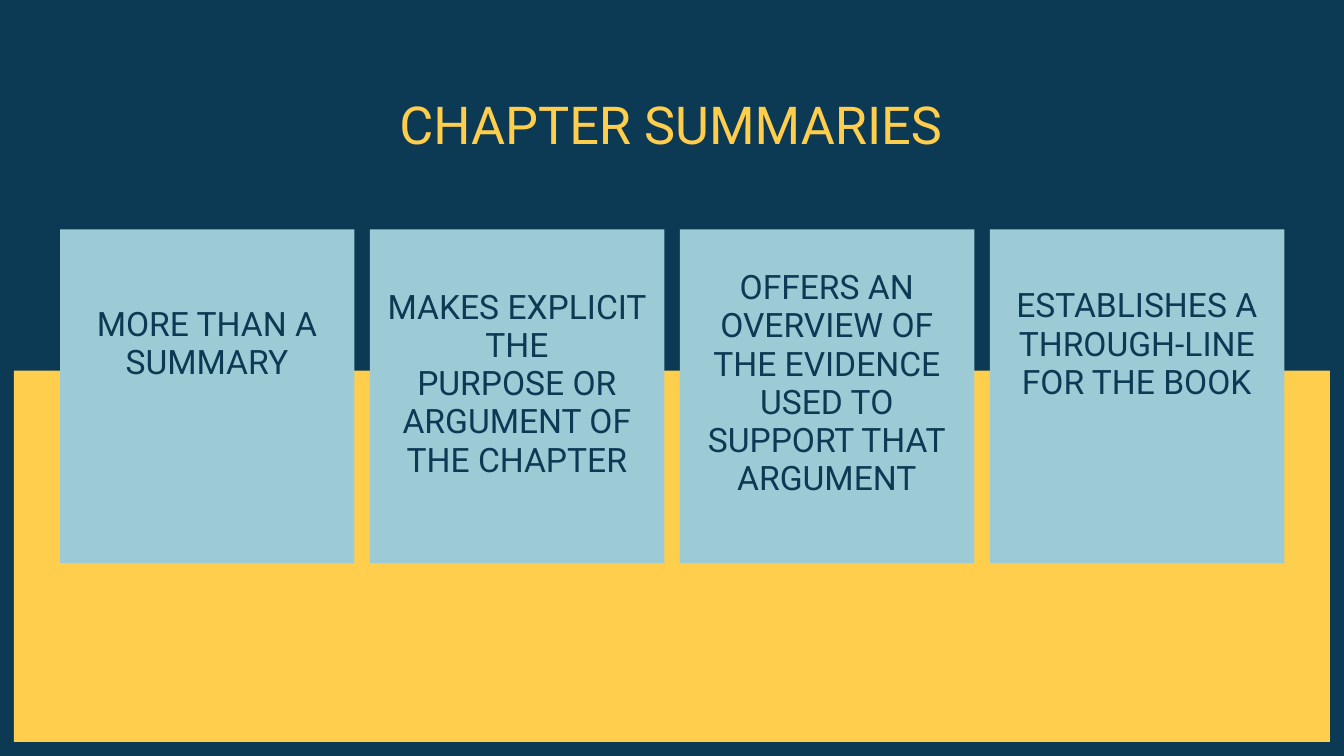
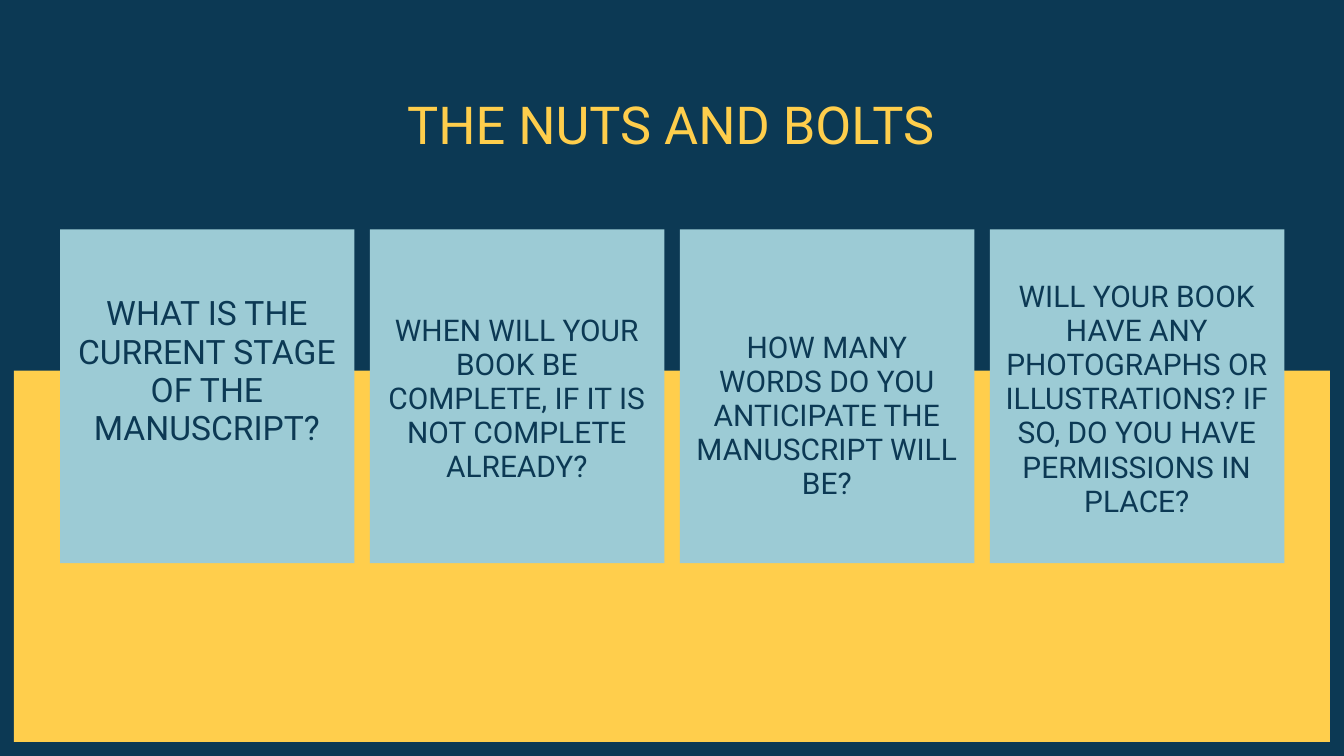
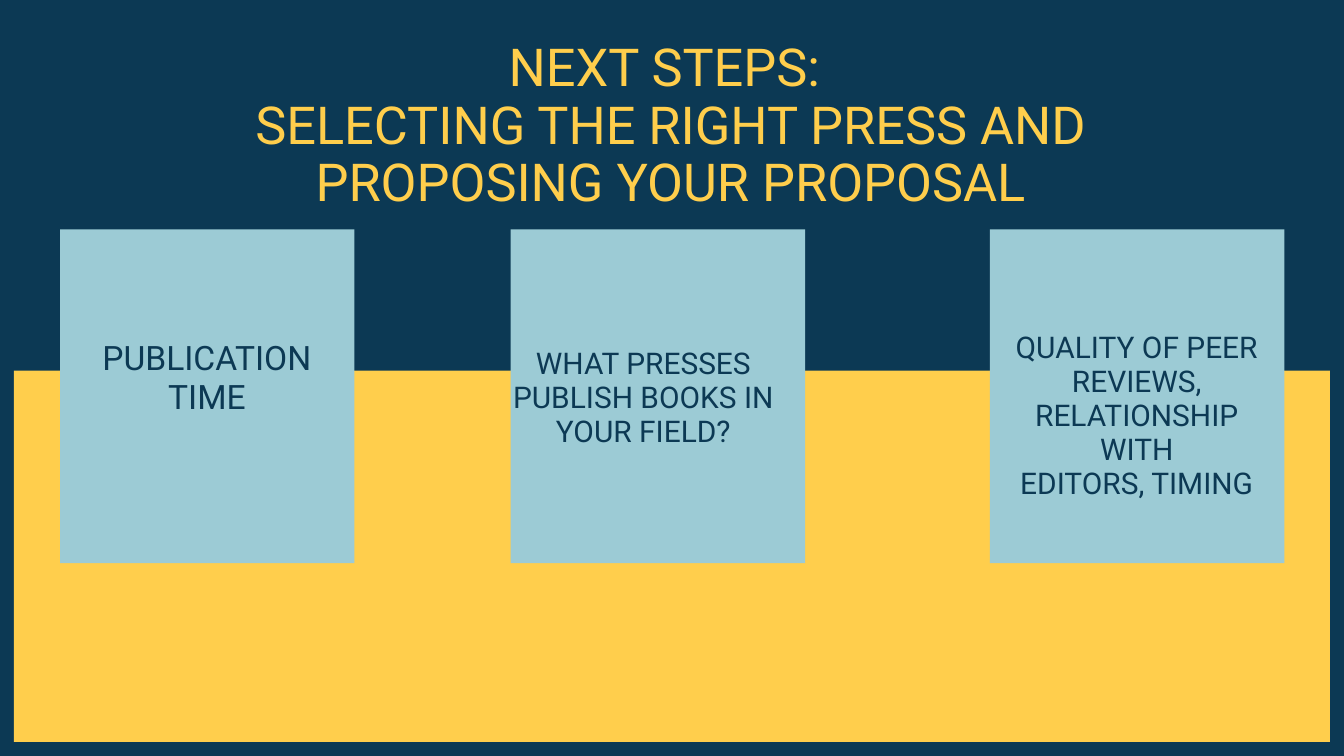
from dataclasses import dataclass

from pptx import Presentation
from pptx.dml.color import RGBColor
from pptx.enum.shapes import MSO_SHAPE
from pptx.enum.text import MSO_ANCHOR, MSO_AUTO_SIZE, PP_ALIGN
from pptx.util import Pt

# Shared look
NAVY = RGBColor(0x0C, 0x39, 0x54)
YELLOW = RGBColor(0xFF, 0xCE, 0x4C)
LIGHT_BLUE = RGBColor(0x9C, 0xCB, 0xD5)
FONT = "Roboto"
RECTANGLE = MSO_SHAPE.RECTANGLE
CENTER = PP_ALIGN.CENTER
TOP = MSO_ANCHOR.TOP
NO_AUTOFIT = MSO_AUTO_SIZE.NONE
TITLE_ONLY = 5

FRAME_FORMAT = {
    "margin_left": 0, "margin_top": 0, "margin_right": 0, "margin_bottom": 0,
    "word_wrap": True, "auto_size": NO_AUTOFIT, "vertical_anchor": TOP,
}

# Layout in points
PAGE_WIDTH, PAGE_HEIGHT = 1440, 810
BAND = (15, 397, 1410, 398)
TITLE_LEFT, TITLE_WIDTH, TITLE_MIDDLE = 79.2, 1279.4, 134.7
CARD_LEFT, CARD_TOP, CARD_PITCH = 64.3, 245.7, 332.1
CARD_WIDTH, CARD_HEIGHT = 315.4, 357.8
TEXT_INSET, TEXT_WIDTH = 15.2, 284.4


@dataclass(frozen=True)
class TextStyle:
    size: float
    leading: float
    color: RGBColor


TITLE = TextStyle(56, 61.6, YELLOW)
LARGE = TextStyle(36, 41, NAVY)
SMALL = TextStyle(32, 36.5, NAVY)


@dataclass(frozen=True)
class Card:
    column: float
    text_top: float
    line_count: int
    style: TextStyle
    paragraphs: tuple[str, ...]
    inset: float = TEXT_INSET


@dataclass(frozen=True)
class Page:
    title: tuple[str, ...]
    cards: tuple[Card, ...]


PAGES = (
    Page(("CHAPTER SUMMARIES",), (
        Card(0, 326.8, 2, LARGE, ("MORE THAN A SUMMARY",)),
        Card(1, 308.1, 5, LARGE, ("MAKES EXPLICIT THE",
                                  "PURPOSE OR ARGUMENT OF THE CHAPTER")),
        Card(2, 287.2, 6, LARGE, ("OFFERS AN OVERVIEW OF THE EVIDENCE USED TO SUPPORT THAT",
                                  "ARGUMENT")),
        Card(3, 306.7, 3, LARGE, ("ESTABLISHES A THROUGH-LINE FOR THE BOOK",)),
    )),
    Page(("THE NUTS AND BOLTS",), (
        Card(0, 315.4, 4, LARGE, ("WHAT IS THE CURRENT STAGE OF THE MANUSCRIPT?",)),
        Card(1, 335.5, 5, SMALL, ("WHEN WILL YOUR BOOK BE COMPLETE, IF IT IS NOT COMPLETE",
                                  "ALREADY?")),
        Card(2, 353.5, 5, SMALL, ("HOW MANY WORDS DO YOU ANTICIPATE THE MANUSCRIPT WILL BE?",)),
        Card(3, 299.5, 7, SMALL, ("WILL YOUR BOOK HAVE ANY PHOTOGRAPHS OR ILLUSTRATIONS? IF",
                                  "SO, DO YOU HAVE PERMISSIONS IN PLACE?")),
    )),
    Page(("NEXT STEPS: ", "SELECTING THE RIGHT PRESS AND", "PROPOSING YOUR PROPOSAL"), (
        Card(0, 363.6, 2, LARGE, ("PUBLICATION TIME",)),
        Card(1.454, 371.5, 3, SMALL, ("WHAT PRESSES PUBLISH BOOKS IN YOUR FIELD?",), inset=0),
        Card(3, 353.5, 5, SMALL, ("QUALITY OF PEER REVIEWS, RELATIONSHIP WITH",
                                  "EDITORS, TIMING")),
    )),
)


def apply_format(target, values: dict) -> None:
    for name, value in values.items():
        setattr(target, name, value)


def write_text(frame, paragraphs: tuple[str, ...], style: TextStyle) -> None:
    apply_format(frame, FRAME_FORMAT)
    for index, text in enumerate(paragraphs):
        para = frame.add_paragraph() if index else frame.paragraphs[0]
        apply_format(para, {"alignment": CENTER, "line_spacing": Pt(style.leading)})
        span = para.add_run()
        span.text = text
        apply_format(span.font, {"name": FONT, "size": Pt(style.size)})
        span.font.color.rgb = style.color


def add_rectangle(slide, left: float, top: float, width: float, height: float,
                  color: RGBColor) -> None:
    box = slide.shapes.add_shape(RECTANGLE, Pt(left), Pt(top), Pt(width), Pt(height))
    box.shadow.inherit = False
    box.fill.solid()
    box.fill.fore_color.rgb = color
    box.line.fill.background()


def set_title(slide, lines: tuple[str, ...]) -> None:
    height = len(lines) * TITLE.leading
    title = slide.shapes.title
    apply_format(title, {
        "left": Pt(TITLE_LEFT), "top": Pt(TITLE_MIDDLE - height / 2),
        "width": Pt(TITLE_WIDTH), "height": Pt(height),
    })
    write_text(title.text_frame, lines, TITLE)


def add_card(slide, card: Card) -> None:
    left = CARD_LEFT + card.column * CARD_PITCH
    add_rectangle(slide, left, CARD_TOP, CARD_WIDTH, CARD_HEIGHT, LIGHT_BLUE)
    box = slide.shapes.add_textbox(Pt(left + card.inset), Pt(card.text_top), Pt(TEXT_WIDTH),
                                   Pt(card.line_count * card.style.leading))
    write_text(box.text_frame, card.paragraphs, card.style)


def add_page(deck, page: Page) -> None:
    slide = deck.slides.add_slide(deck.slide_layouts[TITLE_ONLY])
    add_rectangle(slide, *BAND, YELLOW)
    set_title(slide, page.title)
    for card in page.cards:
        add_card(slide, card)


def main() -> None:
    deck = Presentation()
    apply_format(deck, {"slide_width": Pt(PAGE_WIDTH), "slide_height": Pt(PAGE_HEIGHT)})

    # Navy background for every slide
    background = deck.slide_master.background.fill
    background.solid()
    background.fore_color.rgb = NAVY

    for page in PAGES:
        add_page(deck, page)
    deck.save("out.pptx")


if __name__ == "__main__":
    main()
